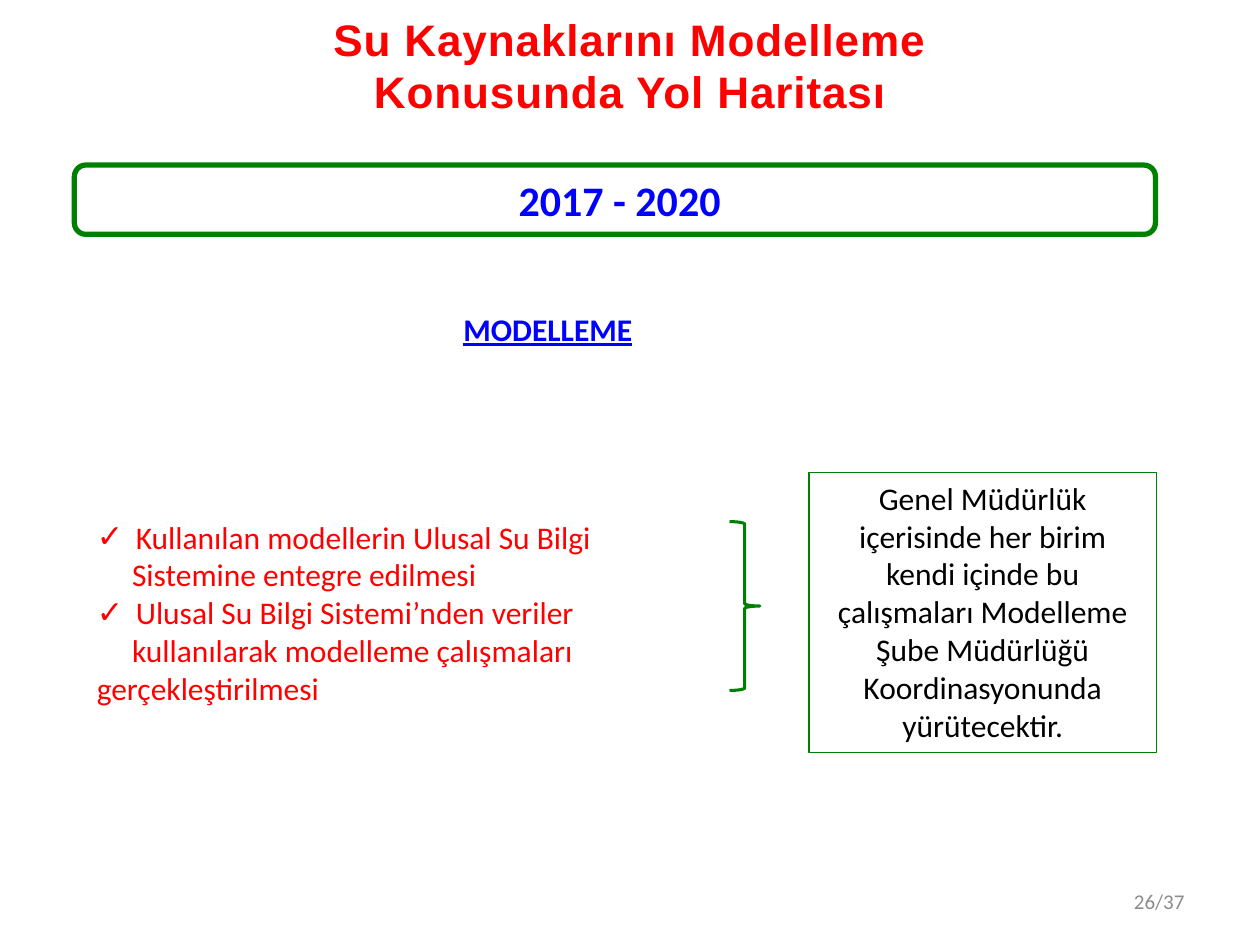
from lxml import etree
from pptx import Presentation
from pptx.dml.color import RGBColor
from pptx.enum import shapes, text
from pptx.oxml import ns
from pptx.util import Inches, Pt

GREEN, BLUE, RED, BLACK, GRAY = "008000", "0000FF", "FF0000", "000000", "8C8C8C"
LEFT, CENTER, RIGHT = text.PP_ALIGN.LEFT, text.PP_ALIGN.CENTER, text.PP_ALIGN.RIGHT
TOP, MIDDLE = text.MSO_ANCHOR.TOP, text.MSO_ANCHOR.MIDDLE


def color(value):
    return RGBColor.from_string(value)


def set_indent(paragraph, margin, first_line, bullet=None):
    properties = paragraph._p.get_or_add_pPr()
    properties.set("marL", str(Inches(margin)))
    properties.set("indent", str(Inches(first_line)))
    if bullet:
        etree.SubElement(properties, ns.qn("a:buFont")).set("typeface", "Arial")
        etree.SubElement(properties, ns.qn("a:buChar")).set("char", bullet)


def write(paragraph, content, size=18, font="Calibri", fill=BLACK, bold=False,
          underline=False, align=LEFT, spacing=None):
    paragraph.text = content
    paragraph.alignment = align
    for run in paragraph.runs:
        run.font.size = Pt(size)
        run.font.name = font
        run.font.bold = bold
        run.font.underline = underline
        run.font.color.rgb = color(fill)
        if spacing:
            run._r.get_or_add_rPr().set("spc", str(round(spacing * 100)))


def prepare_frame(shape, anchor):
    frame = shape.text_frame
    frame.word_wrap = True
    frame.vertical_anchor = anchor
    return frame


def add_text(slide, box, content, anchor=TOP, **text_format):
    shape = slide.shapes.add_textbox(*map(Inches, box))
    write(prepare_frame(shape, anchor).paragraphs[0], content, **text_format)


def add_outline(slide, kind, box, width, content=None, anchor=TOP, **text_format):
    shape = slide.shapes.add_shape(kind, *map(Inches, box))
    shape.shadow.inherit = False
    shape.fill.background()
    shape.line.color.rgb = color(GREEN)
    shape.line.width = Pt(width)
    if content:
        frame = prepare_frame(shape, anchor)
        write(frame.paragraphs[0], content, align=CENTER, **text_format)


def add_tasks(slide, box, tasks):
    """Each task is a checked line followed by its indented continuation."""
    frame = prepare_frame(slide.shapes.add_textbox(*map(Inches, box)), TOP)
    paragraph = frame.paragraphs[0]
    for index, (task, continuation) in enumerate(tasks):
        if index:
            paragraph = frame.add_paragraph()
        set_indent(paragraph, 0.31, -0.31, "✓")
        write(paragraph, task, fill=RED)
        paragraph = frame.add_paragraph()
        set_indent(paragraph, 0, 0.28)
        write(paragraph, continuation, fill=RED)


def main():
    presentation = Presentation()
    presentation.slide_width = Inches(10)
    presentation.slide_height = Inches(7.5)
    slide = presentation.slides.add_slide(presentation.slide_layouts[6])
    kinds = shapes.MSO_SHAPE

    # Title and period
    add_text(slide, (0.5, 0.05, 9, 0.93),
             "Su Kaynaklarını Modelleme\vKonusunda Yol Haritası", anchor=MIDDLE,
             size=25.2, font="Arial", fill=RED, bold=True, align=CENTER, spacing=0.5)
    add_outline(slide, kinds.ROUNDED_RECTANGLE, (0.59, 1.31, 8.58, 0.55), 3,
                " 2017 - 2020", anchor=MIDDLE, size=24, fill=BLUE, bold=True)

    # Modelling tasks
    add_text(slide, (3.58, 2.41, 2.6, 0.4), "MODELLEME",
             fill=BLUE, bold=True, underline=True)
    add_tasks(slide, (0.67, 4.06, 5.83, 1.63), [
        ("Kullanılan modellerin Ulusal Su Bilgi", "Sistemine entegre edilmesi"),
        ("Ulusal Su Bilgi Sistemi’nden veriler",
         "kullanılarak modelleme çalışmaları\vgerçekleştirilmesi"),
    ])

    # Responsible units
    add_outline(slide, kinds.RIGHT_BRACE, (5.79, 4.14, 0.24, 1.34), 1.75)
    add_outline(slide, kinds.RECTANGLE, (6.42, 3.75, 2.76, 2.22), 0.75,
                "Genel Müdürlük içerisinde her birim kendi içinde bu çalışmaları "
                "Modelleme Şube Müdürlüğü Koordinasyonunda yürütecektir.")

    # Page number
    add_text(slide, (7.17, 6.95, 2.33, 0.4), "26/37", anchor=MIDDLE,
             size=12, fill=GRAY, align=RIGHT)

    presentation.save("out.pptx")


if __name__ == "__main__":
    main()
